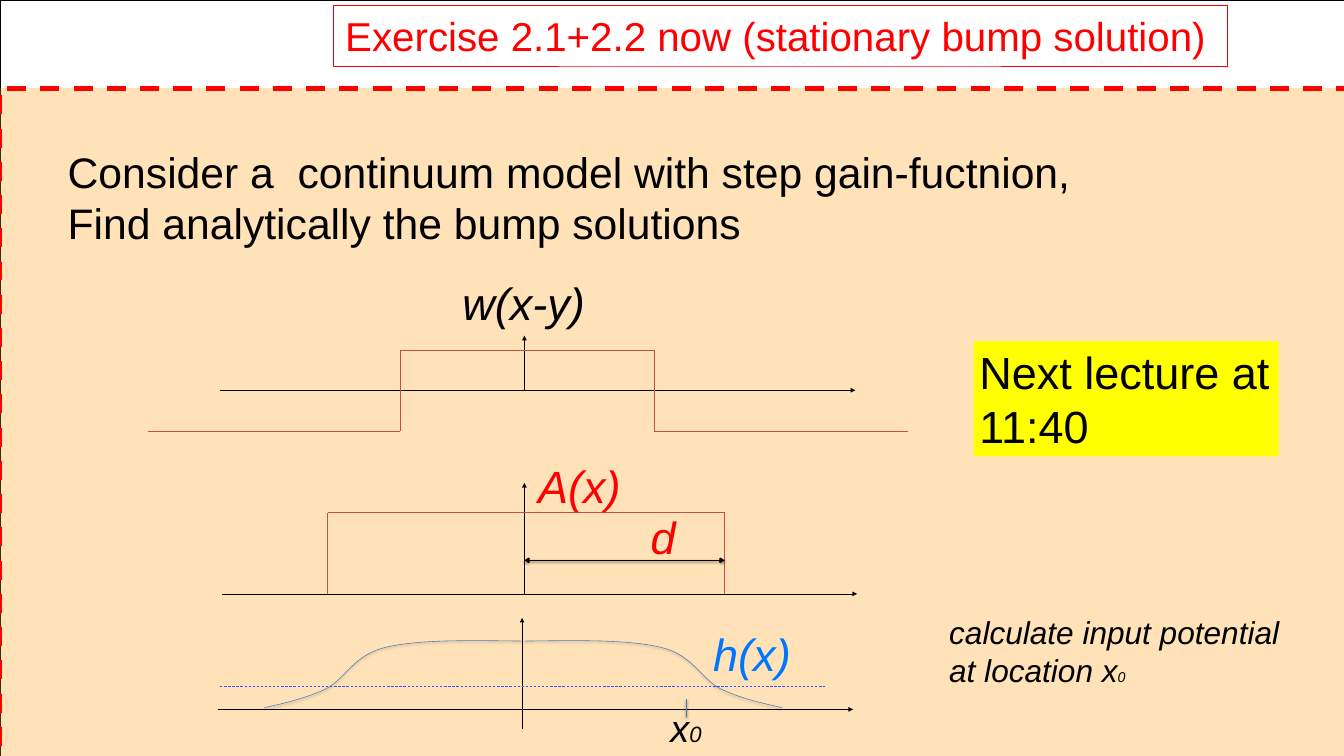
import pptx
import pptx.dml.color
import pptx.enum.dml
import pptx.enum.shapes
import pptx.enum.text
import pptx.oxml
import pptx.oxml.ns
import pptx.util

Inches = pptx.util.Inches
Pt = pptx.util.Pt
RGBColor = pptx.dml.color.RGBColor
DASH = pptx.enum.dml.MSO_LINE.DASH

BLACK = RGBColor(0, 0, 0)
RED = RGBColor(0xFF, 0, 0)
ORANGE = RGBColor(0xFF, 0x99, 0)
YELLOW = RGBColor(0xFF, 0xFF, 0)
BRICK = RGBColor(0xC0, 0x50, 0x4D)
BLUE = RGBColor(0, 0x76, 0xFF)
THRESHOLD_BLUE = RGBColor(0x35, 0x50, 0xFE)
CURVE_BLUE = RGBColor(0x4B, 0x7E, 0xBC)
TICK_BLUE = RGBColor(0x4F, 0x81, 0xBD)

WIDE_INSETS = (0.21, 0.11)
PLAIN_INSETS = (0.1, 0.05)


def set_values(obj, **values):
    for name, value in values.items():
        setattr(obj, name, value)


def inches(*lengths):
    return [Inches(v) for v in lengths]


def add_xml(parent, tag, **attributes):
    el = pptx.oxml.parse_xml(f"<a:{tag} {pptx.oxml.ns.nsdecls('a')}/>")
    for name, value in attributes.items():
        el.set(name, str(value))
    parent.append(el)
    return el


def set_effects(sp, opacity=0, distance=1.6):
    """Give a soft shadow of the given opacity in percent, or none at 0."""
    effects = add_xml(sp._element.spPr, "effectLst")
    if opacity:
        shadow = add_xml(effects, "outerShdw", blurRad=Pt(3.1), dist=Pt(distance),
                         dir=5400000, rotWithShape=0)
        color = add_xml(shadow, "srgbClr", val=BLACK)
        add_xml(color, "alpha", val=opacity * 1000)


def set_outline(sp, color, width=0.75, dash=None):
    sp.line.color.rgb = color
    set_values(sp.line, width=Pt(width), dash_style=dash)


def write(sp, lines, size, color=BLACK, italic=False, insets=PLAIN_INSETS):
    """Fill a shape with lines, each a list of runs given as text or (text, size)."""
    tf = sp.text_frame
    side, edge = inches(*insets)
    set_values(tf, word_wrap=False, margin_left=side, margin_right=side,
               margin_top=edge, margin_bottom=edge,
               vertical_anchor=pptx.enum.text.MSO_ANCHOR.TOP,
               auto_size=pptx.enum.text.MSO_AUTO_SIZE.SHAPE_TO_FIT_TEXT)
    for i, line in enumerate(lines):
        p = tf.add_paragraph() if i else tf.paragraphs[0]
        set_values(p, alignment=pptx.enum.text.PP_ALIGN.LEFT, space_before=Pt(0))
        for part in line:
            text, run_size = part if isinstance(part, tuple) else (part, size)
            r = p.add_run()
            r.text = text
            set_values(r.font, name="Arial", size=Pt(run_size), italic=italic)
            r.font.color.rgb = color


def add_text(s, box, lines, size, **style):
    write(s.shapes.add_textbox(*inches(*box)), lines, size, **style)


def add_label(s, box, text, color=BLACK):
    add_text(s, box, [[text]], 57, color=color, italic=True, insets=WIDE_INSETS)


def add_rect(s, box):
    sp = s.shapes.add_shape(pptx.enum.shapes.MSO_SHAPE.RECTANGLE, *inches(*box))
    sp.shadow.inherit = False
    return sp


def add_line(s, start, end, color=BLACK, width=0.75, dash=None,
             head=None, tail=None, shadow=0):
    c = s.shapes.add_connector(pptx.enum.shapes.MSO_CONNECTOR.STRAIGHT,
                               *inches(*start, *end))
    set_outline(c, color, width, dash)
    for tag, kind in (("headEnd", head), ("tailEnd", tail)):
        if kind:
            add_xml(c.line._get_or_add_ln(), tag, type=kind)
    set_effects(c, shadow)


def add_axes(s, left, base, origin, top, bottom):
    add_line(s, (left, base), (left + 11.17, base), tail="triangle")
    add_line(s, (origin, bottom), (origin, top), tail="triangle")


def add_steps(s, points):
    for start, end in zip(points, points[1:]):
        add_line(s, start, end, BRICK)


def move_placeholder(s, sp, box):
    """Place a placeholder and bring it in front of what is drawn so far."""
    left, top, width, height = inches(*box)
    set_values(sp, left=left, top=top, width=width, height=height)
    s.shapes._spTree.append(sp._element)


def heading(s, box):
    sp = s.shapes.title
    move_placeholder(s, sp, box)
    set_outline(sp, RED)
    write(sp, [["Exercise 2.1+2.2 now (stationary bump solution)"]], 51,
          color=RED, insets=WIDE_INSETS)


def backdrop(s, box):
    sp = add_rect(s, box)
    sp.fill.solid()
    sp.fill.fore_color.rgb = ORANGE
    color = sp._element.spPr.find(".//" + pptx.oxml.ns.qn("a:srgbClr"))
    add_xml(color, "alpha", val=28000)
    set_outline(sp, RED, 6, DASH)


def task(s, box):
    sp = s.placeholders[1]
    move_placeholder(s, sp, box)
    write(sp, [["Consider a  continuum model with step gain-fuctnion,"],
               ["Find analytically the bump solutions"]], 54)
    for p in sp.text_frame.paragraphs:
        pPr = p._p.get_or_add_pPr()
        pPr.set("marL", "0")
        pPr.set("indent", "0")
        add_xml(pPr, "buNone")


def lecture_note(s, box):
    sp = add_rect(s, box)
    sp.fill.solid()
    sp.fill.fore_color.rgb = YELLOW
    sp.line.fill.background()
    write(sp, [["Next lecture at"], ["11:40"]], 57)


def kernel_plot(s, left, top):
    origin, base = left + 6.61, top + 2.13
    low, high = top + 2.85, top + 1.43
    rise, fall = left + 4.43, left + 8.89
    add_axes(s, left + 1.26, base, origin, top + 1.17, base)
    add_steps(s, [(left, low), (rise, low), (rise, high),
                  (fall, high), (fall, low), (left + 13.36, low)])
    add_label(s, (left + 5.31, top, 2.6, 1.17), "w(x-y)")


def activity_plot(s, left, top):
    origin, base, high = left + 5.32, top + 2.49, top + 1.06
    rise, fall = left + 1.86, left + 8.84
    add_axes(s, left, base, origin, top + 0.54, base)
    add_steps(s, [(rise, base), (rise, high), (fall, high), (fall, base)])
    add_label(s, (left + 5.35, top, 1.89, 1.17), "A(x)", RED)
    add_line(s, (origin, top + 1.9), (fall, top + 1.9), width=2,
             head="arrow", tail="arrow", shadow=38)
    add_label(s, (left + 7.33, top + 0.9, 0.87, 1.17), "d", RED)


def bump_half(s, foot, top, side):
    """Draw half of the bump from its foot; side is 1 to the right, -1 to the left."""
    knots = [(0, 1.18), (0.36, 1.1), (0.72, 1.02), (1.08, 0.85), (1.43, 0.67),
             (1.56, 0.26), (2.13, 0.12), (2.71, -0.02), (3.62, 0), (4.53, 0.01)]
    points = [knots[0]]
    for k in range(0, 9, 3):
        for n in range(1, 17):
            t = n / 16
            weights = ((1 - t) ** 3, 3 * t * (1 - t) ** 2, 3 * t * t * (1 - t), t ** 3)
            points.append([sum(w * q[axis] for w, q in zip(weights, knots[k:k + 4]))
                           for axis in (0, 1)])
    points = [inches(foot + side * x, top + y) for x, y in points]
    builder = s.shapes.build_freeform(*points[0])
    builder.add_line_segments(points[1:], close=False)
    sp = builder.convert_to_shape()
    sp.fill.background()
    set_outline(sp, CURVE_BLUE)
    set_effects(sp, 35, 1.8)


def potential_plot(s, left, top):
    base, level, tick = top + 1.61, top + 1.21, left + 8.24
    add_axes(s, left, base, left + 5.35, top, top + 1.95)
    add_line(s, (left + 0.04, level), (left + 10.68, level), THRESHOLD_BLUE, dash=DASH)
    add_label(s, (left + 8.5, top + 0.04, 1.8, 1.17), "h(x)", BLUE)
    for foot, side in ((0.82, 1), (9.92, -1)):
        bump_half(s, left + foot, top + 0.4, side)
    add_text(s, (left + 7.86, top + 1.47, 0.79, 1.87), [["x", ("0", 28)]], 48,
             italic=True)
    add_line(s, (tick, top + 1.43), (tick, top + 1.74), TICK_BLUE, 2, shadow=38)


def bump_slide(prs):
    s = prs.slides.add_slide(prs.slide_layouts[1])
    frame = add_rect(s, (0, 0, 23.63, 13.29))
    frame.fill.background()
    set_outline(frame, BLACK)
    heading(s, (5.86, 0.09, 15.71, 1.07))
    backdrop(s, (0, 1.55, 23.76, 11.95))
    task(s, (1.09, 2.51, 18, 1.92))
    kernel_plot(s, 2.61, 4.73)
    lecture_note(s, (17.12, 6, 5.36, 2.02))
    activity_plot(s, 3.9, 7.95)
    potential_plot(s, 3.83, 10.86)
    add_text(s, (16.59, 10.73, 6.07, 1.45),
             [["calculate input potential"], ["at location x", ("0", 18)]], 40,
             italic=True)


def main():
    prs = pptx.Presentation()
    set_values(prs, slide_width=Inches(23.63), slide_height=Inches(13.29))
    bump_slide(prs)
    prs.save("out.pptx")


if __name__ == "__main__":
    main()
